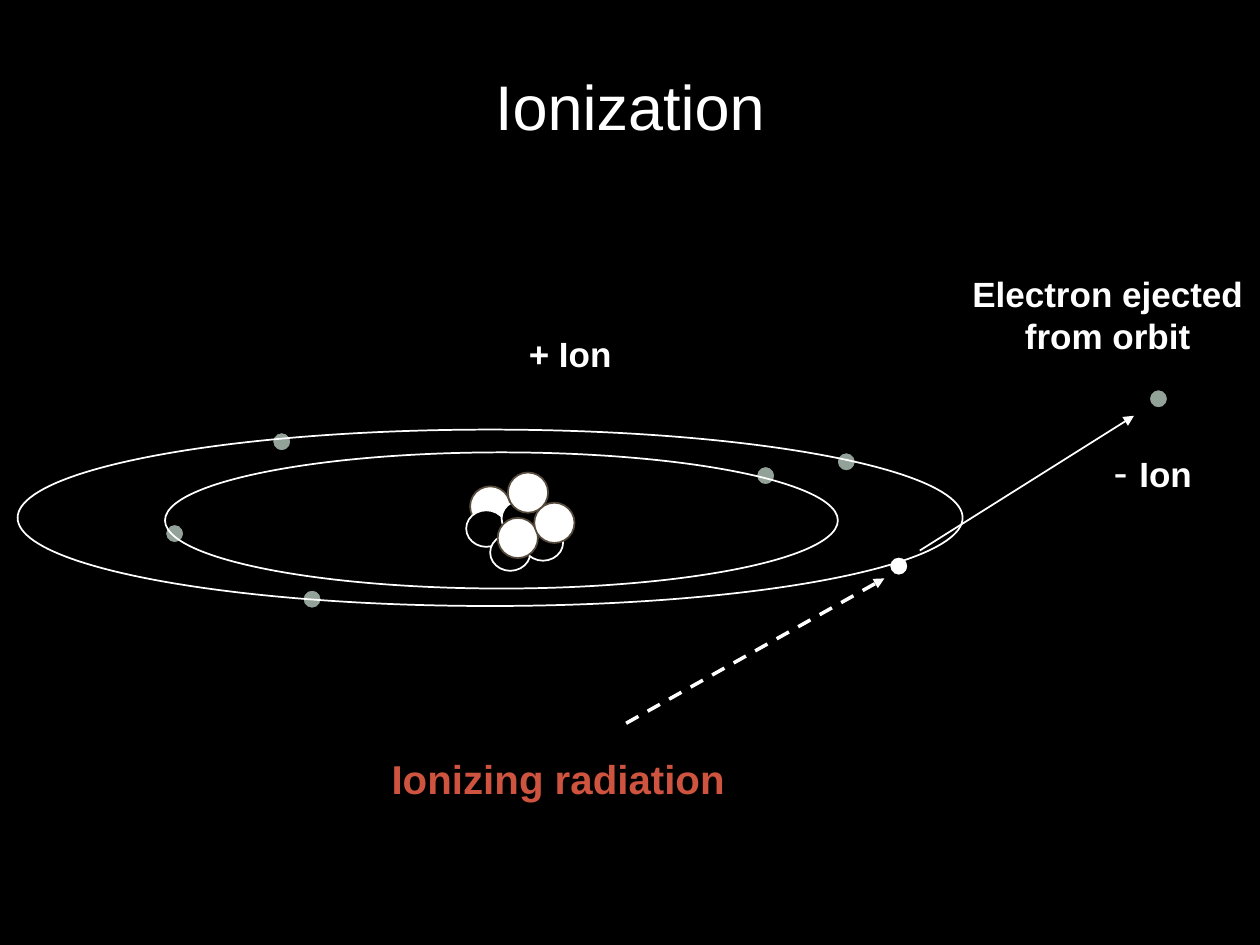
from dataclasses import dataclass

from lxml.etree import SubElement
from pptx import Presentation
from pptx.dml.color import RGBColor
from pptx.enum.dml import MSO_LINE
from pptx.enum.shapes import MSO_CONNECTOR, MSO_SHAPE
from pptx.enum.text import MSO_ANCHOR, PP_ALIGN
from pptx.oxml.ns import qn
from pptx.util import Pt


@dataclass(frozen=True)
class Theme:
    font: str = "Arial"
    black: RGBColor = RGBColor(0, 0, 0)
    white: RGBColor = RGBColor(255, 255, 255)
    electron: RGBColor = RGBColor(0x93, 0xA2, 0x99)
    proton_edge: RGBColor = RGBColor(0x56, 0x4B, 0x3C)
    radiation: RGBColor = RGBColor(0xCF, 0x54, 0x3F)
    title_size: int = 36
    radiation_size: int = 23
    minus_size: int = 24
    label_size: int = 20


THEME = Theme()
WIDTH, HEIGHT = 720, 540
ELECTRON = 10.8


def solid(shape, color):
    shape.fill.solid()
    shape.fill.fore_color.rgb = color


def style(run, size, color=THEME.white, bold=True):
    run.font.name = THEME.font
    run.font.size = Pt(size)
    run.font.bold = bold
    run.font.color.rgb = color


def ellipse(shapes, x, y, w, h, fill, edge):
    oval = shapes.add_shape(MSO_SHAPE.OVAL, Pt(x), Pt(y), Pt(w), Pt(h))
    oval.shadow.inherit = False
    if fill is None:
        oval.fill.background()
    else:
        solid(oval, fill)
    oval.line.color.rgb = edge
    oval.line.width = Pt(1)


def electron(shapes, center_x, center_y, fill=THEME.electron):
    ellipse(shapes, center_x - ELECTRON / 2, center_y - ELECTRON / 2,
            ELECTRON, ELECTRON, fill, THEME.black)


def arrow(shapes, start, end, width, dash=None):
    path_line = shapes.add_connector(
        MSO_CONNECTOR.STRAIGHT, *(Pt(v) for v in (*start, *end)))
    path_line.line.color.rgb = THEME.white
    path_line.line.width = Pt(width)
    if dash is not None:
        path_line.line.dash_style = dash
    SubElement(path_line.line._get_or_add_ln(), qn("a:tailEnd"), type="triangle")
    SubElement(path_line._element.spPr, qn("a:effectLst"))


def label(shapes, box, text, size, color=THEME.white, align=PP_ALIGN.LEFT):
    frame = shapes.add_textbox(*(Pt(v) for v in box)).text_frame
    frame.word_wrap = True
    paragraph = frame.paragraphs[0]
    paragraph.text = text
    paragraph.alignment = align
    style(paragraph.runs[0], size, color)
    return paragraph


def add_title(slide, x, y, w, h):
    title = slide.shapes.title
    title.left, title.top, title.width, title.height = (Pt(v) for v in (x, y, w, h))
    solid(title, THEME.black)
    title.text_frame.text = "Ionization"
    title.text_frame.vertical_anchor = MSO_ANCHOR.MIDDLE
    paragraph = title.text_frame.paragraphs[0]
    paragraph.alignment = PP_ALIGN.CENTER
    style(paragraph.runs[0], THEME.title_size, bold=False)


def add_backdrop(slide, x, y, w, h):
    backdrop = slide.shapes.add_shape(MSO_SHAPE.RECTANGLE, Pt(x), Pt(y), Pt(w), Pt(h))
    backdrop.shadow.inherit = False
    solid(backdrop, THEME.black)
    backdrop.line.fill.background()


def add_nucleus(slide, x, y):
    nucleus = slide.shapes.add_group_shape().shapes
    proton = (23, 23, THEME.white, THEME.proton_edge)
    neutron = (23, 20.9, THEME.black, THEME.white)
    # Back to front
    for dx, dy, kind in (
            (2.2, 7.9, proton), (0, 21.6, neutron), (13.7, 35.3, neutron),
            (32.4, 29.5, neutron), (20.2, 15.8, neutron), (18, 25.9, proton),
            (38.9, 17.3, proton), (23.8, 0, proton)):
        ellipse(nucleus, x + dx, y + dy, *kind)


def add_atom(slide, x, y, w, h):
    shapes = slide.shapes
    # Bound electrons, then the one that is hit
    for dx, dy in ((427.4, 26.3), (150.9, 6.9), (89.7, 59.4),
                   (473.5, 18.4), (168.2, 96.9)):
        electron(shapes, x + dx, y + dy)
    electron(shapes, x + 503.5, y + 78, THEME.white)
    # Outer and inner orbit
    ellipse(shapes, x, y, w, h, None, THEME.white)
    ellipse(shapes, x + 84.2, y + 13, 384.5, 77.8, None, THEME.white)
    add_nucleus(slide, x + 256.3, y + 24.5)
    label(shapes, (x + 285, y - 59, 81.4, 31), "+ Ion", THEME.label_size)


def add_ejection(slide, x, y, w, h):
    shapes = slide.shapes
    label(shapes, (x + w - 174, y, 174, 55.4), "Electron ejected from orbit",
          THEME.label_size, align=PP_ALIGN.CENTER)
    electron(shapes, x + 136.4, y + 76)
    arrow(shapes, (x, y + h), (x + 122.4, y + 85.7), 1)
    minus_ion = label(shapes, (x + 103.7, y + 99.4, 68.4, 36), "- ", THEME.minus_size)
    minus_ion.runs[0].font.bold = False
    ion = minus_ion.add_run()
    ion.text = "Ion"
    style(ion, THEME.label_size)


def add_radiation(slide, x, y, w, h):
    arrow(slide.shapes, (x + 141.1, y + 82.8), (x + w, y), 2, MSO_LINE.DASH)
    label(slide.shapes, (x, y + h - 34.6, 270.7, 34.6), "Ionizing radiation",
          THEME.radiation_size, THEME.radiation)


def main():
    deck = Presentation()
    deck.slide_width, deck.slide_height = Pt(WIDTH), Pt(HEIGHT)
    slide = deck.slides.add_slide(deck.slide_layouts[5])
    add_title(slide, 0, 0, WIDTH, 120.2)
    add_backdrop(slide, 0, 96.5, WIDTH, HEIGHT - 96.5)
    add_atom(slide, 10.1, 245.5, 540, 100.8)
    add_ejection(slide, 525.6, 151.9, 194.4, 162.7)
    add_radiation(slide, 216.7, 330.5, 288.7, 131.8)
    deck.save("out.pptx")


if __name__ == "__main__":
    main()
